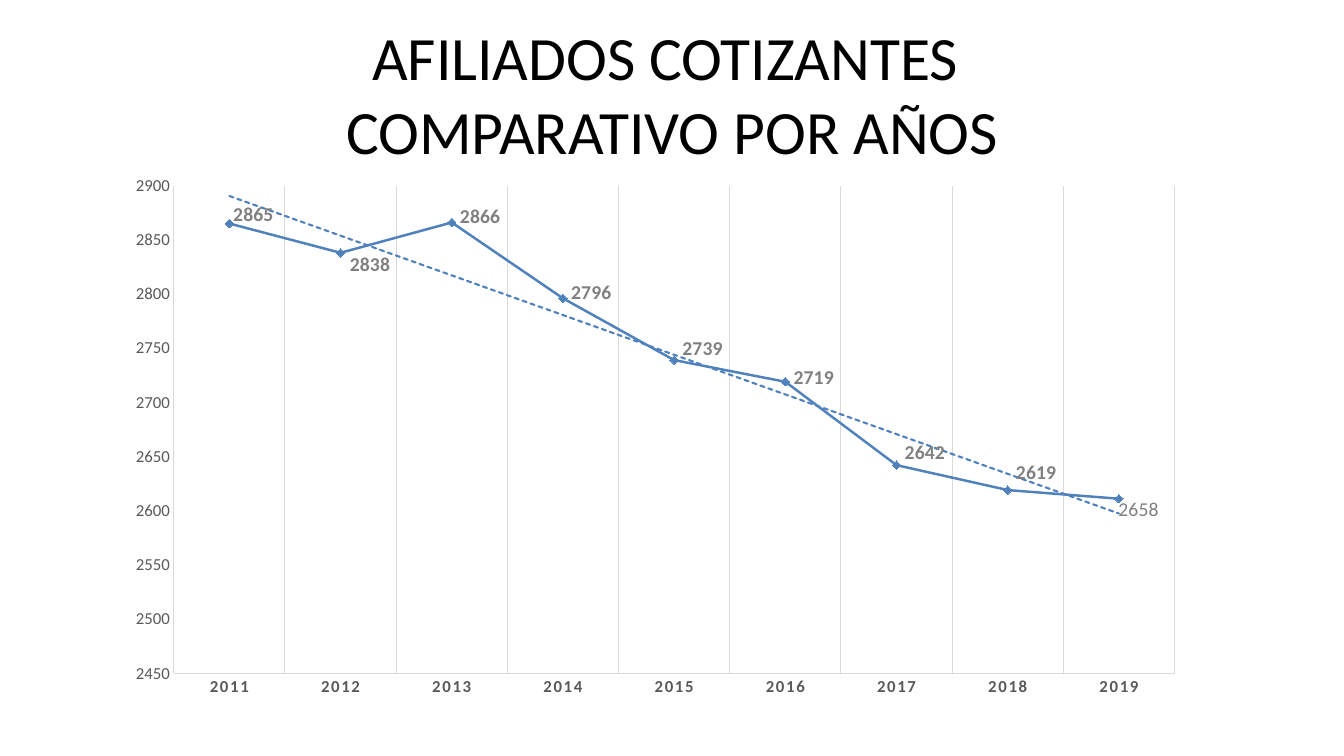
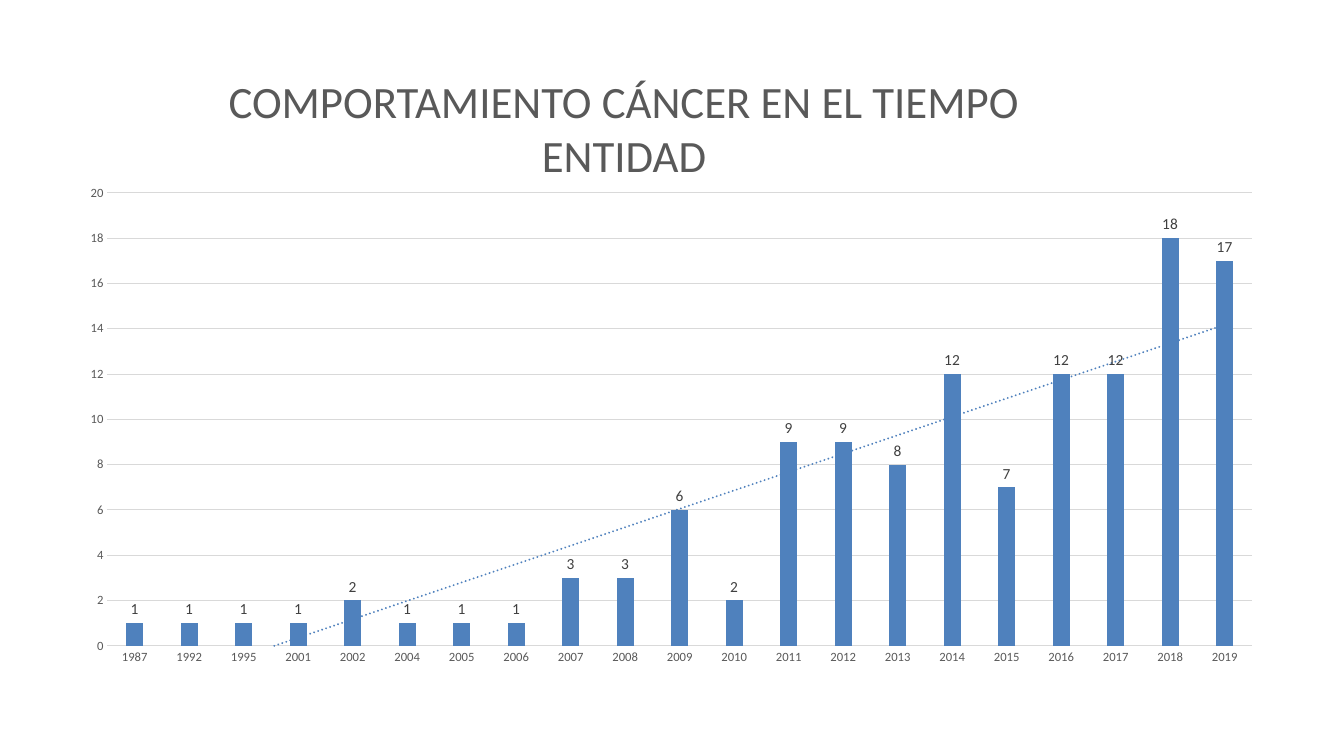
from dataclasses import dataclass

import lxml.etree
import pptx
import pptx.chart.data
import pptx.dml.color
import pptx.enum.chart
import pptx.enum.text
import pptx.oxml
import pptx.oxml.ns
import pptx.util
from pptx.util import Inches

RGBColor = pptx.dml.color.RGBColor
XL = pptx.enum.chart

# Shared style
FONT = "Calibri"
BLACK = RGBColor(0x00, 0x00, 0x00)
DARK = RGBColor(0x40, 0x40, 0x40)
GREY = RGBColor(0x59, 0x59, 0x59)
MID = RGBColor(0x80, 0x80, 0x80)
PALE = RGBColor(0xD9, 0xD9, 0xD9)
BLUE = RGBColor(0x4F, 0x81, 0xBD)


@dataclass
class Box:
    left: float
    top: float
    width: float
    height: float


@dataclass
class Page:
    title: str
    size: int
    color: RGBColor
    head: Box
    kind: XL.XL_CHART_TYPE
    years: list[int]
    vals: list[int]
    area: Box
    plot: Box  # shares of the chart area
    low: int
    high: int
    step: int
    text: int  # size of the axis labels
    dash: str


@dataclass
class Shift:
    """Label offset from its usual place, as shares of the chart."""
    x: float
    y: float


LINE = Page(
    "AFILIADOS COTIZANTES \vCOMPARATIVO POR AÑOS", 44, BLACK, Box(0.67, 0.3, 12, 1.25),
    XL.XL_CHART_TYPE.LINE_MARKERS, list(range(2011, 2020)),
    [2865, 2838, 2866, 2796, 2739, 2719, 2642, 2619, 2611],
    Box(1.09, 1.42, 10.92, 5.78), Box(0.058, 0.073, 0.909, 0.837),
    2450, 2900, 50, 12, "sysDash")
BARS = Page(
    "COMPORTAMIENTO CÁNCER EN EL TIEMPO\vENTIDAD", 32, GREY, Box(1.68, 0.64, 9.02, 1.25),
    XL.XL_CHART_TYPE.COLUMN_CLUSTERED,
    [1987, 1992, 1995, 2001, 2002, *range(2004, 2020)],
    [1, 1, 1, 1, 2, 1, 1, 1, 3, 3, 6, 2, 9, 9, 8, 12, 7, 12, 12, 18, 17],
    Box(0.67, 1.75, 12, 4.95), Box(0.033, 0.033, 0.946, 0.908),
    0, 20, 2, 9, "sysDot")
MOVES = [Shift(-0.004, -0.015), Shift(0.001, 0.02), Shift(0, -0.01),
         Shift(0, -0.01), Shift(0, -0.02), Shift(0, -0.007),
         Shift(0, -0.022), Shift(0, -0.03), Shift(-0.008, 0.019)]


def style(font, size: int, color: RGBColor, bold: bool = False) -> None:
    font.name = FONT
    font.size = pptx.util.Pt(size)
    font.bold = bold
    font.color.rgb = color


def place(box: Box) -> list[int]:
    return [Inches(n) for n in (box.left, box.top, box.width, box.height)]


def node(xml: str) -> lxml.etree.ElementBase:
    """Parse one chart element, with its namespaces added."""
    name, rest = xml[1:].split(">", 1)
    spaces = pptx.oxml.ns.nsdecls("c", "a")
    return pptx.oxml.parse_xml(f"<{name} {spaces}>{rest}")


def rule(line, color: RGBColor) -> None:
    line.color.rgb = color
    line.width = pptx.util.Pt(0.75)


def set_axis(axis, size: int, bold: bool, line: bool, grid: bool) -> None:
    axis.major_tick_mark = axis.minor_tick_mark = XL.XL_TICK_MARK.NONE
    style(axis.tick_labels.font, size, GREY, bold)
    axis.has_major_gridlines = grid
    if grid:
        rule(axis.major_gridlines.format.line, PALE)
    if line:
        rule(axis.format.line, PALE)
    else:
        axis.format.line.fill.background()


def add_trend(chart, dash: str) -> None:
    cat = chart.element.xpath("//c:ser/c:cat")[0]
    cat.addprevious(node(
        f'<c:trendline><c:spPr><a:ln w="19050" cap="rnd"><a:solidFill>'
        f'<a:srgbClr val="{BLUE}"/></a:solidFill><a:prstDash val="{dash}"/></a:ln></c:spPr>'
        '<c:trendlineType val="linear"/><c:dispRSqr val="0"/><c:dispEq val="0"/></c:trendline>'))


def set_plot(chart, plot: Box) -> None:
    area = chart.element.xpath("//c:plotArea")[0]
    for old in area.xpath("c:layout"):
        area.remove(old)
    area.insert(0, node(
        '<c:layout><c:manualLayout><c:layoutTarget val="inner"/>'
        '<c:xMode val="edge"/><c:yMode val="edge"/>'
        f'<c:x val="{plot.left}"/><c:y val="{plot.top}"/>'
        f'<c:w val="{plot.width}"/><c:h val="{plot.height}"/></c:manualLayout></c:layout>'))


def add_page(deck, page: Page):
    """Add a titled slide with its chart and trend line; return the chart."""
    slide = deck.slides.add_slide(deck.slide_layouts[5])
    title = slide.shapes.title
    title.left, title.top, title.width, title.height = place(page.head)
    frame = title.text_frame
    frame.text = page.title
    frame.vertical_anchor = pptx.enum.text.MSO_ANCHOR.MIDDLE
    para = frame.paragraphs[0]
    para.alignment = pptx.enum.text.PP_ALIGN.CENTER
    style(para.font, page.size, page.color)

    data = pptx.chart.data.CategoryChartData()
    data.categories = [str(year) for year in page.years]
    data.add_series("Series 1", page.vals)
    chart = slide.shapes.add_chart(page.kind, *place(page.area), data).chart
    chart.has_legend = chart.has_title = False
    style(chart.font, page.text, BLACK)
    chart.plots[0].vary_by_categories = False
    axis = chart.value_axis
    axis.minimum_scale, axis.maximum_scale = page.low, page.high
    axis.major_unit = page.step
    set_plot(chart, page.plot)
    add_trend(chart, page.dash)
    return chart


def set_labels(series, size: int, color: RGBColor, bold: bool, spot) -> None:
    labels = series.data_labels
    labels.show_value = True
    labels.position = spot
    style(labels.font, size, color, bold)


def draw_line(deck) -> None:
    chart = add_page(deck, LINE)
    set_axis(chart.category_axis, LINE.text, True, True, True)
    set_axis(chart.value_axis, LINE.text, False, True, False)
    # Wider letters for the years
    chart.element.xpath("//c:catAx/c:txPr//a:defRPr")[0].set("spc", "120")

    series = chart.plots[0].series[0]
    series.smooth = False
    series.format.line.color.rgb = BLUE
    series.format.line.width = pptx.util.Pt(1.75)
    mark = series.marker
    mark.style, mark.size = XL.XL_MARKER_STYLE.DIAMOND, 6
    mark.format.fill.solid()
    mark.format.fill.fore_color.rgb = BLUE
    mark.format.line.color.rgb = BLUE

    # Value labels, each nudged away from the line
    spot = XL.XL_LABEL_POSITION.RIGHT
    set_labels(series, 14, MID, True, spot)
    last = len(MOVES) - 1
    for i, move in enumerate(MOVES):
        label = series.points[i].data_label
        if i == last:
            label.text_frame.text = "2658"
            style(label.text_frame.paragraphs[0].runs[0].font, 14, MID)
        else:
            style(label.font, 14, MID, True)
        label.position = spot
        index = chart.element.xpath(f"//c:dLbl/c:idx[@val='{i}']")[0]
        index.addnext(node(
            f'<c:layout><c:manualLayout><c:x val="{move.x}"/><c:y val="{move.y}"/>'
            '</c:manualLayout></c:layout>'))


def draw_bars(deck) -> None:
    chart = add_page(deck, BARS)
    set_axis(chart.category_axis, BARS.text, False, True, False)
    set_axis(chart.value_axis, BARS.text, False, False, True)
    plot = chart.plots[0]
    plot.gap_width, plot.overlap = 219, -27
    series = plot.series[0]
    series.format.fill.solid()
    series.format.fill.fore_color.rgb = BLUE
    set_labels(series, 11, DARK, False, XL.XL_LABEL_POSITION.OUTSIDE_END)


def main() -> None:
    deck = pptx.Presentation()
    deck.slide_width, deck.slide_height = Inches(13.33), Inches(7.5)
    draw_line(deck)
    draw_bars(deck)
    deck.save("out.pptx")


if __name__ == "__main__":
    main()
